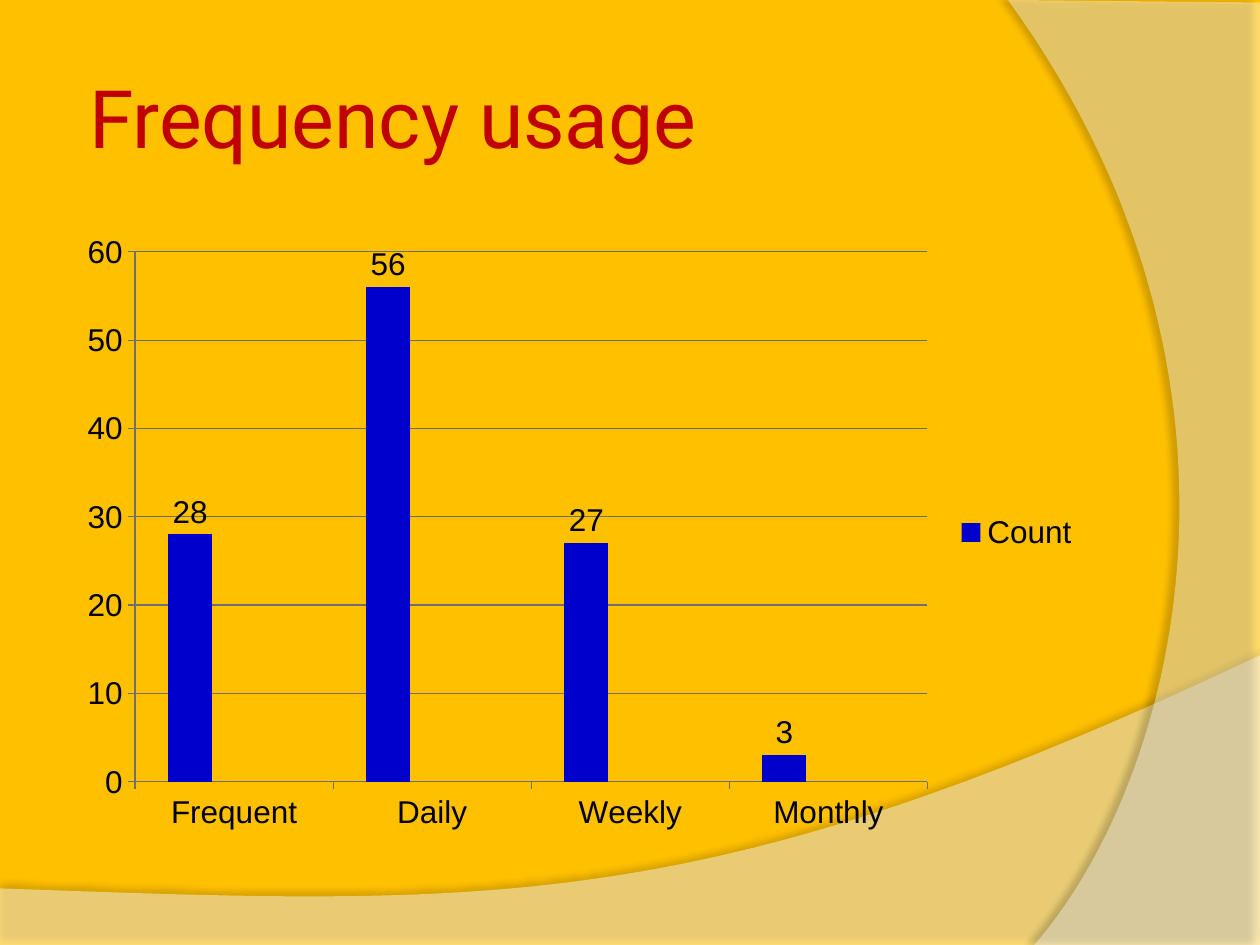
"""Build the frequency usage slide: two translucent swooshes, a title and a column chart."""
from dataclasses import dataclass

from pptx import Presentation
from pptx import util as u
from pptx.chart.data import CategoryChartData
from pptx.dml.color import RGBColor
from pptx.enum import chart as charts, text
from pptx.oxml import parse_xml
from pptx.oxml.ns import nsdecls, qn


@dataclass(frozen=True)
class Theme:
    """Colours, fonts and type sizes of the slide."""
    ground: str = "FFC000"
    swoosh: str = "FFFFFF"
    title: str = "C00000"
    ink: str = "000000"
    grid: str = "6F6F6F"
    bars: tuple = ("0000CC", "DBF5F9", "FFFFFF")
    title_font: str = "Roboto"
    chart_font: str = "Arial"
    title_size: int = 46
    chart_size: int = 18


THEME = Theme()
WIDTH, HEIGHT = 25.4, 19.05


def rgb(value):
    """Return the colour for a hex value."""
    return RGBColor.from_string(value)


def curve(start, first, second, end, steps=60):
    """Return points along a cubic curve."""
    weights = [((1 - t) ** 3, 3 * t * (1 - t) ** 2, 3 * t * t * (1 - t), t ** 3)
               for t in (step / steps for step in range(steps + 1))]
    return [tuple(sum(w * p[axis] for w, p in zip(row, (start, first, second, end)))
                  for axis in (0, 1)) for row in weights]


def add_swoosh(page, box, points, opacity, shade, distance, angle):
    """Draw a translucent outline with a soft shadow; points are relative to the box."""
    left, top = box
    spots = [(u.Cm(left + x), u.Cm(top + y)) for x, y in points]
    builder = page.shapes.build_freeform(*spots[0], scale=1.0)
    builder.add_line_segments(spots[1:], close=True)
    shape = builder.convert_to_shape()
    shape.fill.solid()
    shape.fill.fore_color.rgb = rgb(THEME.swoosh)
    shape.line.fill.background()
    shape.shadow.inherit = False
    properties = shape._element.spPr
    properties.find(".//" + qn("a:srgbClr")).append(
        parse_xml(f'<a:alpha {nsdecls("a")} val="{opacity * 1000}"/>'))
    properties.find(qn("a:effectLst")).append(parse_xml(
        f'<a:outerShdw {nsdecls("a")} blurRad="{u.Pt(4)}" dist="{u.Pt(distance)}" '
        f'dir="{angle * 60000}" algn="ctr" rotWithShape="0"><a:srgbClr val="{THEME.ink}">'
        f'<a:alpha val="{shade * 1000}"/></a:srgbClr></a:outerShdw>'))


def add_backdrop(page):
    """Colour the page and lay the two swooshes over it."""
    page.background.fill.solid()
    page.background.fill.fore_color.rgb = rgb(THEME.ground)
    wave = curve((WIDTH, 0), (14.2, 5.31), (9.93, 5.05), (0, 4.7))
    add_swoosh(page, (0, 13.21), [(0, 5.87), (WIDTH, 5.87)] + wave, 45, 35, 3.5, 270)
    arc = curve((0.53, HEIGHT), (3.43, 15.72), (5.54, 7.62), (0, 0))
    add_swoosh(page, (20.32, 0), [(5.08, 0.05), (5.08, HEIGHT)] + arc, 40, 45, 4, 180)


def add_title(page, box, wording):
    """Place the slide title in the given box."""
    frame = page.shapes.add_textbox(*map(u.Cm, box)).text_frame
    frame.word_wrap = True
    frame.vertical_anchor = text.MSO_ANCHOR.MIDDLE
    frame.margin_left = u.Cm(0.53)
    frame.margin_right = frame.margin_top = frame.margin_bottom = u.Cm(0.13)
    frame.text = wording
    font = frame.paragraphs[0].runs[0].font
    font.name, font.size = THEME.title_font, u.Pt(THEME.title_size)
    font.color.rgb = rgb(THEME.title)


def style_axis(axis):
    """Give an axis outward ticks and a thin grey line."""
    axis.major_tick_mark = charts.XL_TICK_MARK.OUTSIDE
    axis.minor_tick_mark = charts.XL_TICK_MARK.NONE
    axis.format.line.color.rgb = rgb(THEME.grid)
    axis.format.line.width = u.Pt(0.75)


def set_plot_area(chart, **place):
    """Fix the inner plot area as fractions of the chart."""
    area = chart._chartSpace.chart.plotArea
    for layout in area.findall(qn("c:layout")):
        area.remove(layout)
    values = "".join(f'<c:{key} val="{value}"/>' for key, value in place.items())
    area.insert(0, parse_xml(
        f'<c:layout {nsdecls("c")}><c:manualLayout><c:layoutTarget val="inner"/>'
        f'<c:xMode val="edge"/><c:yMode val="edge"/>{values}</c:manualLayout></c:layout>'))


def add_legend(chart, hidden):
    """Show the legend at the right without the hidden entries."""
    chart.has_legend = True
    chart.legend.position = charts.XL_LEGEND_POSITION.RIGHT
    chart.legend.include_in_layout = False
    for place, index in enumerate(hidden, 1):
        chart.legend._element.insert(place, parse_xml(
            f'<c:legendEntry {nsdecls("c")}><c:idx val="{index}"/>'
            '<c:delete val="1"/></c:legendEntry>'))


def add_usage_chart(page, box):
    """Place the column chart of usage counts in the given box."""
    data = CategoryChartData()
    data.categories = ["Frequent", "Daily", "Weekly", "Monthly"]
    data.add_series("Count", (28, 56, 27, 3))
    for name in ("Series 2", "Series 3"):
        data.add_series(name, (None,) * 4)
    chart = page.shapes.add_chart(
        charts.XL_CHART_TYPE.COLUMN_CLUSTERED, *map(u.Cm, box), data).chart
    chart.has_title = False
    chart.font.name, chart.font.size = THEME.chart_font, u.Pt(THEME.chart_size)
    chart.font.color.rgb = rgb(THEME.ink)
    plot = chart.plots[0]
    plot.gap_width, plot.overlap, plot.vary_by_categories = 150, 0, False
    for series, colour in zip(plot.series, THEME.bars):
        series.format.fill.solid()
        series.format.fill.fore_color.rgb = rgb(colour)
    labels = plot.series[0].data_labels
    labels.show_value = True
    labels.position = charts.XL_LABEL_POSITION.OUTSIDE_END
    style_axis(chart.category_axis)
    scale = chart.value_axis
    style_axis(scale)
    scale.minimum_scale, scale.maximum_scale, scale.major_unit = 0, 60, 10
    scale.has_major_gridlines = True
    scale.major_gridlines.format.line.color.rgb = rgb(THEME.grid)
    scale.major_gridlines.format.line.width = u.Pt(0.75)
    add_legend(chart, hidden=(1, 2))
    set_plot_area(chart, x=0.07, y=0.05, w=0.77, h=0.85)


def main():
    """Build and save the deck."""
    deck = Presentation()
    deck.slide_width, deck.slide_height = u.Cm(WIDTH), u.Cm(HEIGHT)
    page = deck.slides.add_slide(deck.slide_layouts[6])
    add_backdrop(page)
    add_title(page, (1.27, 0.76, 20.75, 3.18), "Frequency usage")
    add_usage_chart(page, (1.27, 4.45, 20.75, 12.57))
    deck.save("out.pptx")


if __name__ == "__main__":
    main()
